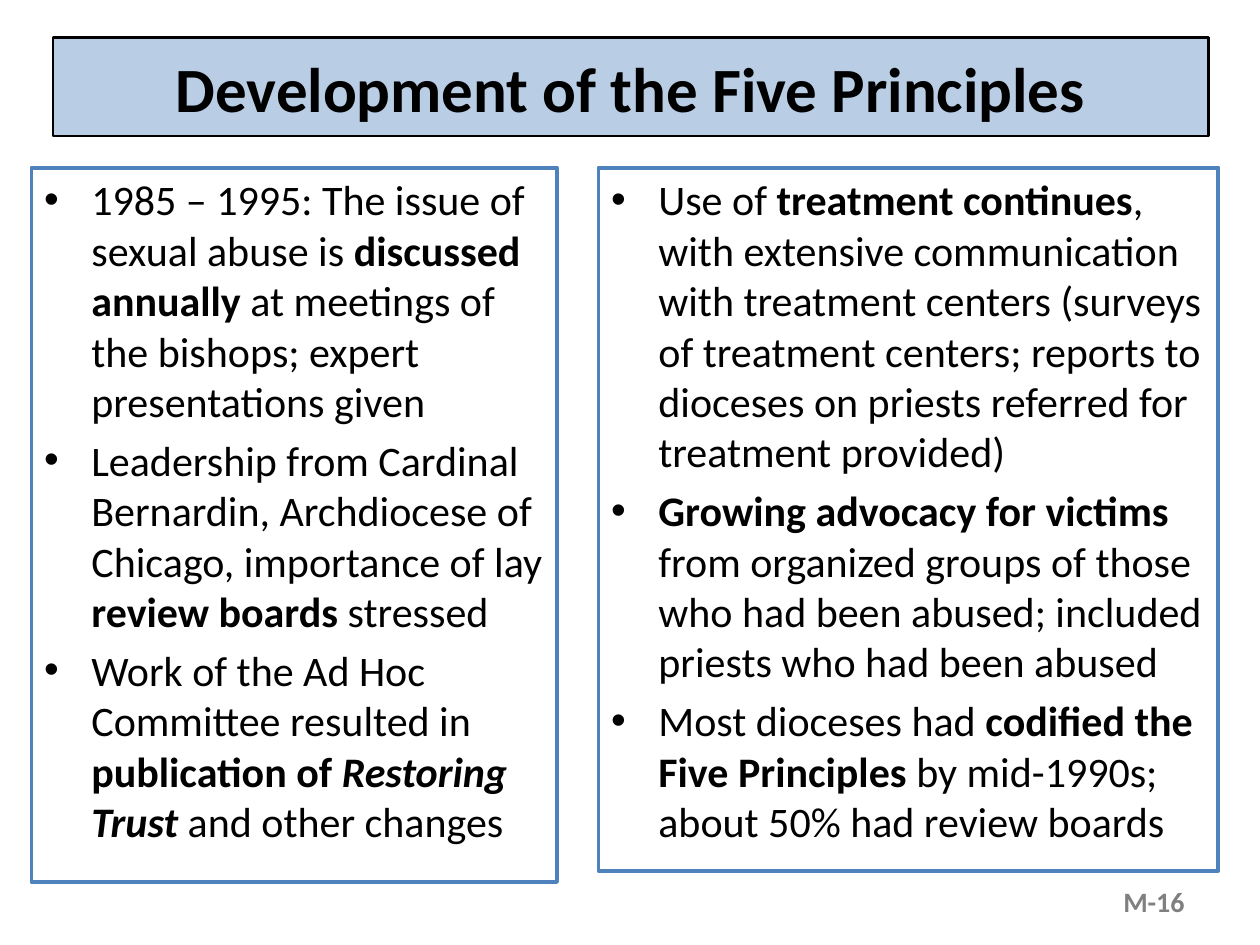
from pptx import Presentation
from pptx.dml.color import RGBColor
from pptx.enum import text
from pptx.util import Inches, Pt

COLORS = {"ink": "000000", "band": "B9CDE5", "edge": "4F81BD", "page": "808080"}
FONT = "Calibri"
TITLE = "Development of the Five Principles"
PAGE = "M-16"
LEFT = [
    [("1985 – 1995: The issue of sexual abuse is ", ""), ("discussed annually ", "b"),
     ("at meetings of the bishops; expert presentations given", "")],
    [("Leadership from Cardinal Bernardin, Archdiocese of Chicago, importance of lay ", ""),
     ("review boards ", "b"), ("stressed", "")],
    [("Work of the Ad Hoc Committee resulted in ", ""), ("publication of ", "b"),
     ("Restoring Trust ", "bi"), ("and other changes", "")],
]
RIGHT = [
    [("Use of ", ""), ("treatment continues", "b"),
     (", with extensive communication with treatment centers (surveys of treatment "
      "centers; reports to dioceses on priests referred for treatment provided)", "")],
    [("Growing advocacy for victims ", "b"),
     ("from organized groups of those who had been abused; "
      "included priests who had been abused", "")],
    [("Most dioceses had ", ""), ("codified the Five Principles ", "b"),
     ("by mid-1990s; about 50% had review boards", "")],
]
BODIES = [(1, (0.25, 1.33, 4.17, 5.67), LEFT), (2, (4.75, 1.33, 4.92, 5.58), RIGHT)]


def color(name):
    return RGBColor.from_string(COLORS[name])


def place(shape, box):
    shape.left, shape.top, shape.width, shape.height = map(Inches, box)
    shape.text_frame.word_wrap = True
    shape.text_frame.auto_size = text.MSO_AUTO_SIZE.NONE


def outline(shape, name, width):
    shape.line.color.rgb = color(name)
    shape.line.width = Pt(width)


def style(para, size, name, bold=None):
    font = para.font
    font.name, font.size, font.bold = FONT, Pt(size), bold
    font.color.rgb = color(name)


def label(shape, words, size, name, align):
    shape.text_frame.text = words
    shape.text_frame.vertical_anchor = text.MSO_ANCHOR.MIDDLE
    para = shape.text_frame.paragraphs[0]
    para.alignment = align
    style(para, size, name, True)


def fill_list(frame, items):
    for i, runs in enumerate(items):
        para = frame.add_paragraph() if i else frame.paragraphs[0]
        style(para, 24, "ink")
        for words, marks in runs:
            run = para.add_run()
            run.text = words
            if "b" in marks:
                run.font.bold = True
            if "i" in marks:
                run.font.italic = True


def main():
    deck = Presentation()
    deck.slide_width, deck.slide_height = Inches(10), Inches(7.5)
    slide = deck.slides.add_slide(deck.slide_layouts[3])

    title = slide.shapes.title
    place(title, (0.42, 0.3, 9.17, 0.78))
    title.fill.solid()
    title.fill.fore_color.rgb = color("band")
    outline(title, "ink", 1.5)
    label(title, TITLE, 36, "ink", text.PP_ALIGN.CENTER)

    for idx, box, items in BODIES:
        body = slide.placeholders[idx]
        place(body, box)
        outline(body, "edge", 2.25)
        fill_list(body.text_frame, items)

    page = slide.shapes.add_textbox(0, 0, 0, 0)
    place(page, (7.17, 6.95, 2.33, 0.4))
    label(page, PAGE, 16, "page", text.PP_ALIGN.RIGHT)

    deck.save("out.pptx")


if __name__ == "__main__":
    main()
